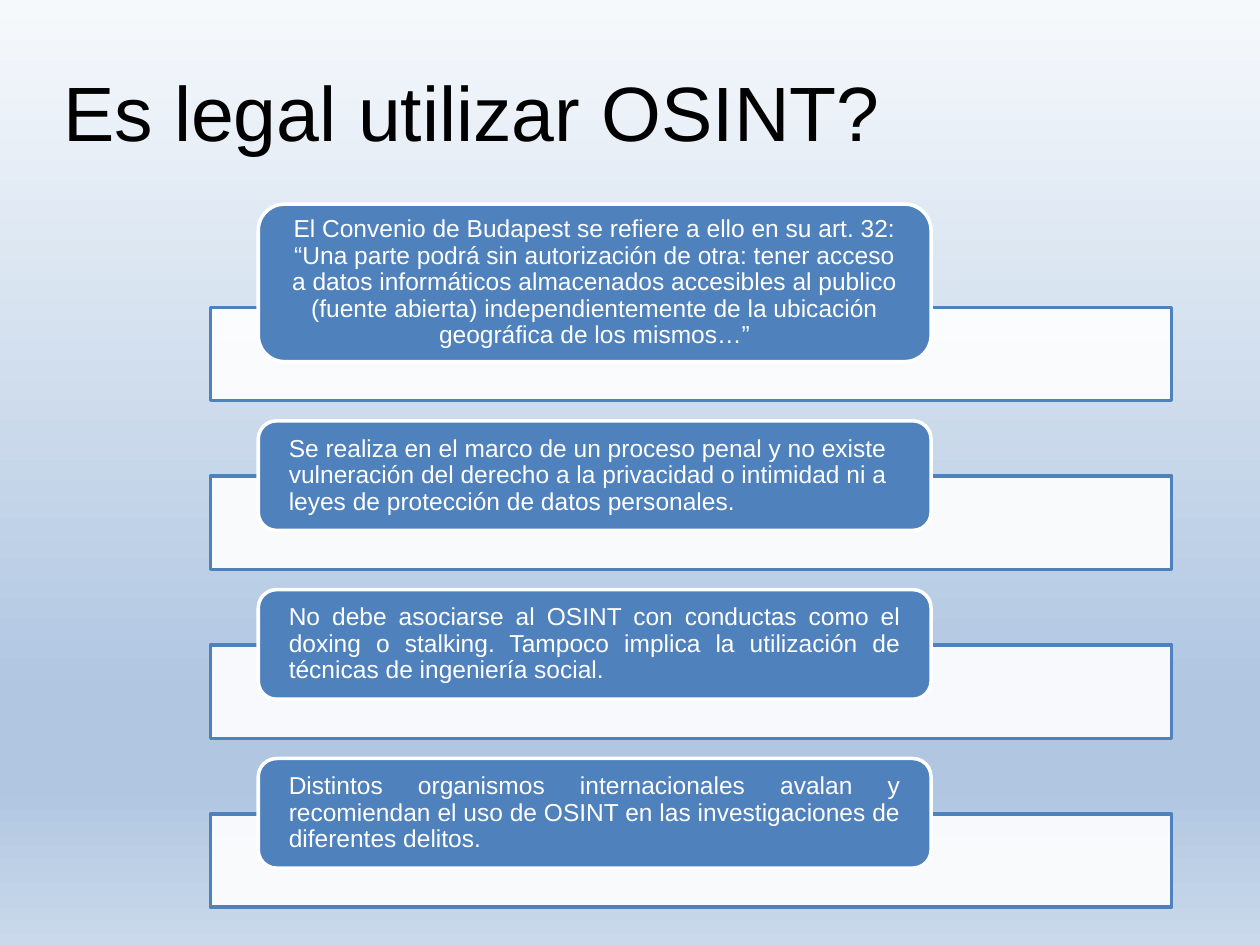
from lxml.etree import SubElement
from pptx import Presentation
from pptx.dml.color import RGBColor
from pptx.enum.shapes import MSO_SHAPE
from pptx.enum.text import MSO_ANCHOR, MSO_AUTO_SIZE, PP_ALIGN
from pptx.oxml.ns import qn
from pptx.util import Inches, Pt

BLUE, WHITE, BLACK = "4F81BD", "FFFFFF", "000000"
BACKGROUND = [(0, "F6F9FC"), (74, "B0C6E1"), (83, "B0C6E1"), (100, "CAD9EB")]
BAR_LEFT, BAR_TOP, BAR_W, BAR_H = 1.67, 2.44, 7.63, 0.74
CARD_LEFT, CARD_W, OVERLAP = 2.05, 5.34, 0.43
ROW = 1.34

CARDS = [
    (1.25, PP_ALIGN.CENTER,
     "El Convenio de Budapest se refiere a ello en su art. 32: “Una parte podrá sin "
     "autorización de otra: tener acceso a datos informáticos almacenados accesibles al "
     "publico (fuente abierta) independientemente de la ubicación geográfica de los mismos…”"),
    (0.87, PP_ALIGN.LEFT,
     "Se realiza en el marco de un proceso penal y no existe vulneración del derecho a la "
     "privacidad o intimidad ni a leyes de protección de datos personales."),
    (0.87, PP_ALIGN.JUSTIFY,
     "No debe asociarse al OSINT con conductas como el doxing o stalking. Tampoco implica "
     "la utilización de técnicas de ingeniería social."),
    (0.87, PP_ALIGN.JUSTIFY,
     "Distintos organismos internacionales avalan y recomiendan el uso de OSINT en las "
     "investigaciones de diferentes delitos."),
]


def add_box(kind, left, top, width, height, fill, line):
    sp = s.shapes.add_shape(kind, Inches(left), Inches(top), Inches(width), Inches(height))
    sp.shadow.inherit = False
    sp.fill.solid()
    sp.fill.fore_color.rgb = RGBColor.from_string(fill)
    sp.line.color.rgb = RGBColor.from_string(line)
    sp.line.width = Pt(2)
    return sp


def write(tf, text, size, color, align, inset):
    tf.word_wrap = True
    tf.vertical_anchor = MSO_ANCHOR.MIDDLE
    tf.margin_left = tf.margin_right = Inches(inset)
    tf.margin_top = tf.margin_bottom = 0
    p = tf.paragraphs[0]
    p.alignment = align
    p.line_spacing = 0.9
    r = p.add_run()
    r.text = text
    r.font.name = "Arial"
    r.font.size = Pt(size)
    r.font.color.rgb = RGBColor.from_string(color)


prs = Presentation()
prs.slide_width, prs.slide_height = Inches(10), Inches(7.5)
s = prs.slides.add_slide(prs.slide_layouts[5])

# Four-stop vertical gradient
fill = s.background.fill
fill.gradient()
fill.gradient_angle = 270
stops = next(s.element.iter(qn("a:gsLst")))
for stop in list(stops):
    stops.remove(stop)
for position, color in BACKGROUND:
    stop = SubElement(stops, qn("a:gs"), pos=str(position * 1000))
    SubElement(stop, qn("a:srgbClr"), val=color)

title = s.shapes.title
title.left, title.top = Inches(0.5), Inches(0.59)
title.width, title.height = Inches(9), Inches(0.67)
write(title.text_frame, "Es legal utilizar OSINT?", 44, BLACK, PP_ALIGN.LEFT, 0)
title.text_frame.auto_size = MSO_AUTO_SIZE.SHAPE_TO_FIT_TEXT

for i, (height, align, text) in enumerate(CARDS):
    top = BAR_TOP + i * ROW
    bar = add_box(MSO_SHAPE.RECTANGLE, BAR_LEFT, top, BAR_W, BAR_H, WHITE, BLUE)
    bar_color = next(bar.element.spPr.find(qn("a:solidFill")).iter(qn("a:srgbClr")))
    SubElement(bar_color, qn("a:alpha"), val="90000")
    card = add_box(MSO_SHAPE.ROUNDED_RECTANGLE, CARD_LEFT, top + OVERLAP - height,
                   CARD_W, height, BLUE, WHITE)
    write(card.text_frame, text, 14, WHITE, align, 0.2)

prs.save("out.pptx")
